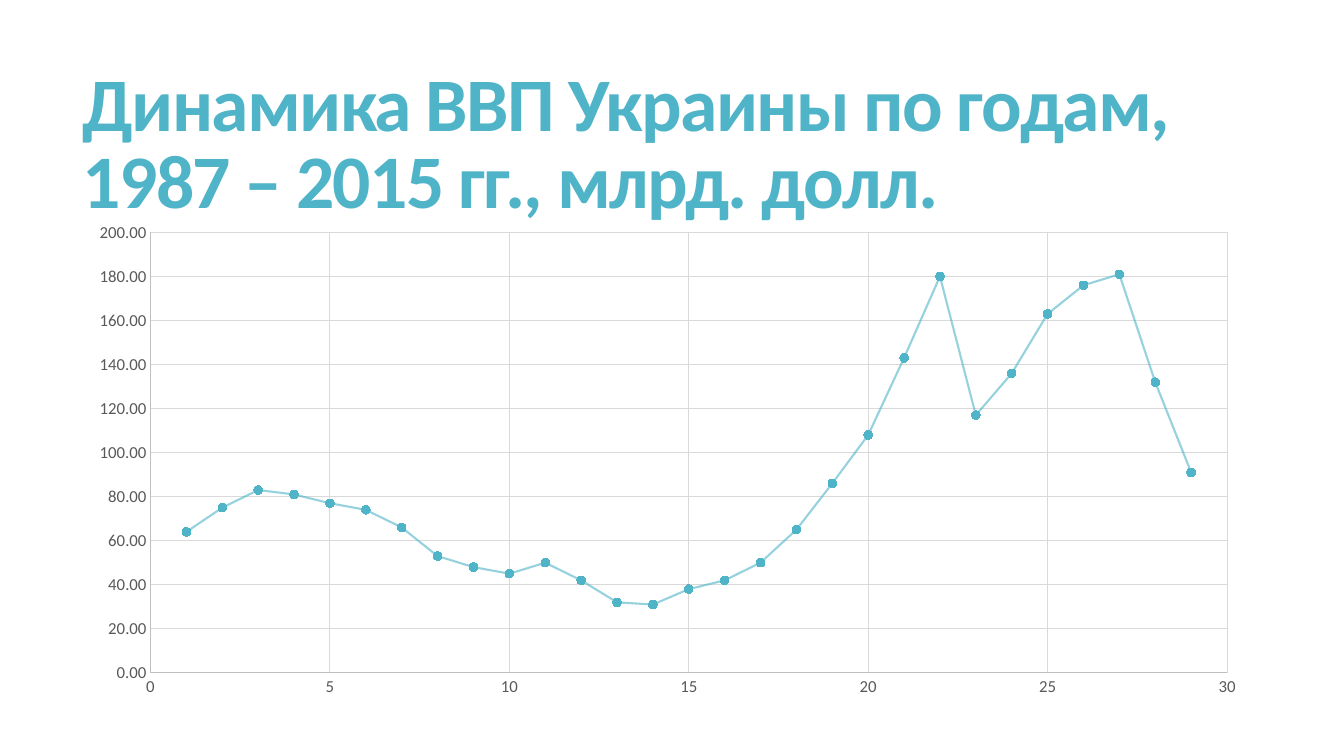
from lxml.etree import SubElement
from pptx import Presentation
from pptx.chart.data import XyChartData
from pptx.dml.color import RGBColor
from pptx.enum.chart import XL_CHART_TYPE, XL_MARKER_STYLE, XL_TICK_MARK
from pptx.enum.text import MSO_ANCHOR, MSO_AUTO_SIZE, PP_ALIGN
from pptx.oxml import parse_xml
from pptx.oxml.ns import nsdecls, qn
from pptx.util import Inches, Pt

FONT = "Calibri"
TEAL = "50B4C8"
GDP = [64, 75, 83, 81, 77, 74, 66, 53, 48, 45, 50, 42, 32, 31, 38, 42, 50, 65, 86,
       108, 143, 180, 117, 136, 163, 176, 181, 132, 91]


def paint(color_format, hex_color):
    """Give a colour format the colour of a hex string."""
    color_format.rgb = RGBColor.from_string(hex_color)


def style_line(line, hex_color, width):
    """Draw a solid line of the given colour and width."""
    line.fill.solid()
    paint(line.fill.fore_color, hex_color)
    line.width = Pt(width)


def style_font(font, size, hex_color):
    """Set typeface, size and colour."""
    font.name = FONT
    font.size = Pt(size)
    paint(font.color, hex_color)


def place_title(slide, left, top, width, height):
    """Write the heading in the title placeholder."""
    title = slide.shapes.title
    title.left, title.top, title.width, title.height = map(Inches, (left, top, width, height))
    frame = title.text_frame
    frame.text = "Динамика ВВП Украины по годам, 1987 – 2015 гг., млрд. долл."
    frame.word_wrap = True
    frame.auto_size = MSO_AUTO_SIZE.NONE
    frame.vertical_anchor = MSO_ANCHOR.MIDDLE
    heading = frame.paragraphs[0]
    heading.alignment = PP_ALIGN.LEFT
    heading.line_spacing = 0.85
    font = heading.runs[0].font
    style_font(font, 54, TEAL)
    font.bold = True
    heading.runs[0]._r.get_or_add_rPr().set("spc", "-120")


def style_axis(axis, maximum, step, number_format):
    """Set scale, grid, line and labels of one axis."""
    axis.minimum_scale, axis.maximum_scale, axis.major_unit = 0, maximum, step
    axis.major_tick_mark = axis.minor_tick_mark = XL_TICK_MARK.NONE
    axis.has_major_gridlines = True
    style_line(axis.major_gridlines.format.line, "D9D9D9", 0.75)
    style_line(axis.format.line, "BFBFBF", 0.75)
    axis.tick_labels.number_format = number_format
    axis.tick_labels.number_format_is_linked = False
    style_font(axis.tick_labels.font, 12, "595959")


def style_series(series):
    """Draw a smooth translucent curve with round markers."""
    series.smooth = True
    style_line(series.format.line, TEAL, 1.5)
    stroke = series.format.line.fill._xPr.find(".//" + qn("a:srgbClr"))
    SubElement(stroke, qn("a:alpha"), val="60000")
    marker = series.marker
    marker.style = XL_MARKER_STYLE.CIRCLE
    marker.size = 6
    marker.format.fill.solid()
    paint(marker.format.fill.fore_color, TEAL)
    marker.format.line.fill.background()


def fix_plot_area(chart, x, y, w, h):
    """Pin the inner plot area to shares of the chart's box."""
    plot_area = chart._chartSpace.chart.plotArea
    for automatic in plot_area.findall(qn("c:layout")):
        plot_area.remove(automatic)
    plot_area.insert(0, parse_xml(
        f'<c:layout {nsdecls("c")}><c:manualLayout><c:layoutTarget val="inner"/>'
        '<c:xMode val="edge"/><c:yMode val="edge"/>'
        f'<c:x val="{x}"/><c:y val="{y}"/><c:w val="{w}"/><c:h val="{h}"/>'
        '</c:manualLayout></c:layout>'))


def place_gdp_chart(slide, left, top, width, height):
    """Plot GDP against the number of the year."""
    points = XyChartData()
    gdp = points.add_series("Series 1")
    for year, value in enumerate(GDP, start=1):
        gdp.add_data_point(year, value)
    chart = slide.shapes.add_chart(XL_CHART_TYPE.XY_SCATTER_SMOOTH,
                                   *map(Inches, (left, top, width, height)), points).chart
    chart.has_legend = chart.has_title = False
    style_font(chart.font, 10, "000000")
    chart.plots[0].vary_by_categories = False
    style_axis(chart.category_axis, 30, 5, "General")
    style_axis(chart.value_axis, 200, 20, "0.00")
    style_series(chart.plots[0].series[0])
    fix_plot_area(chart, 0.064, 0.04, 0.908, 0.89)


def main():
    """Build the slide and save it."""
    deck = Presentation()
    deck.slide_width, deck.slide_height = Inches(13.33), Inches(7.5)
    slide = deck.slides.add_slide(deck.slide_layouts[5])
    place_title(slide, 0.72, 0.55, 11.78, 1.81)
    place_gdp_chart(slide, 0.74, 2.11, 11.76, 4.91)
    deck.save("out.pptx")


if __name__ == "__main__":
    main()
